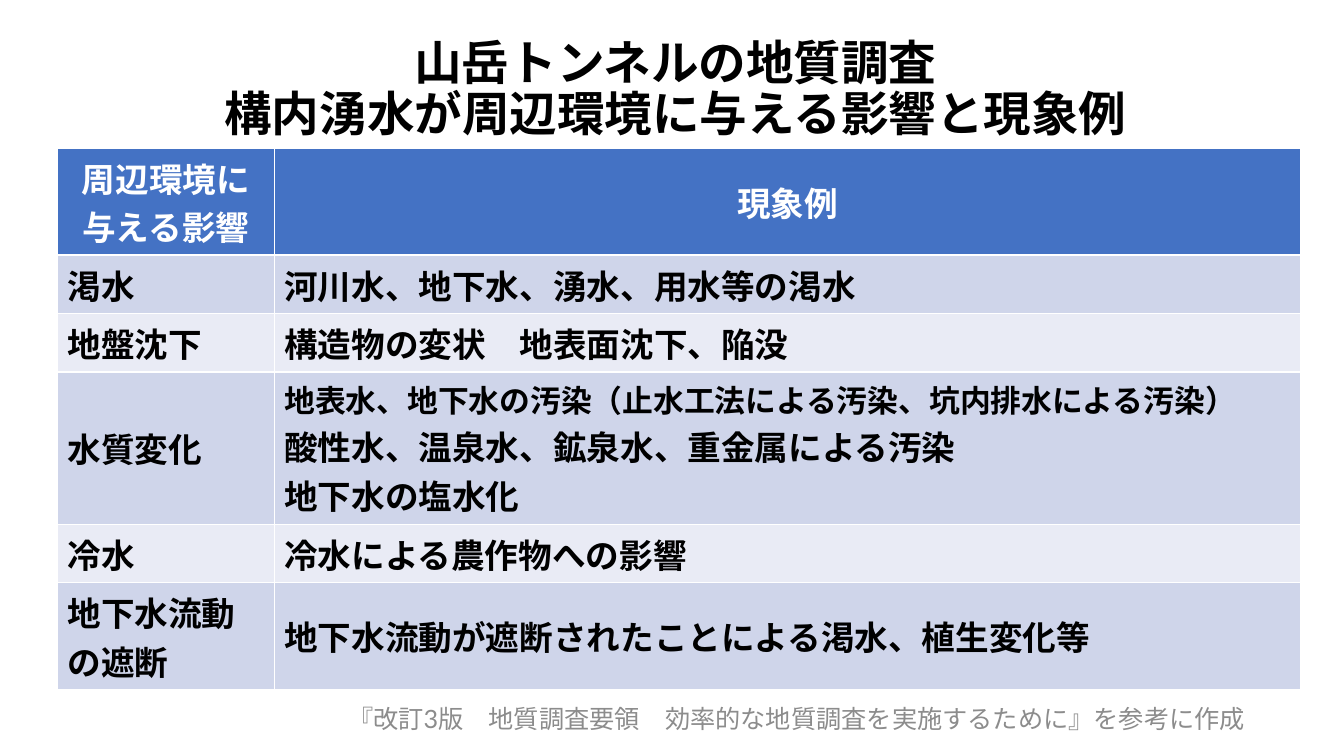
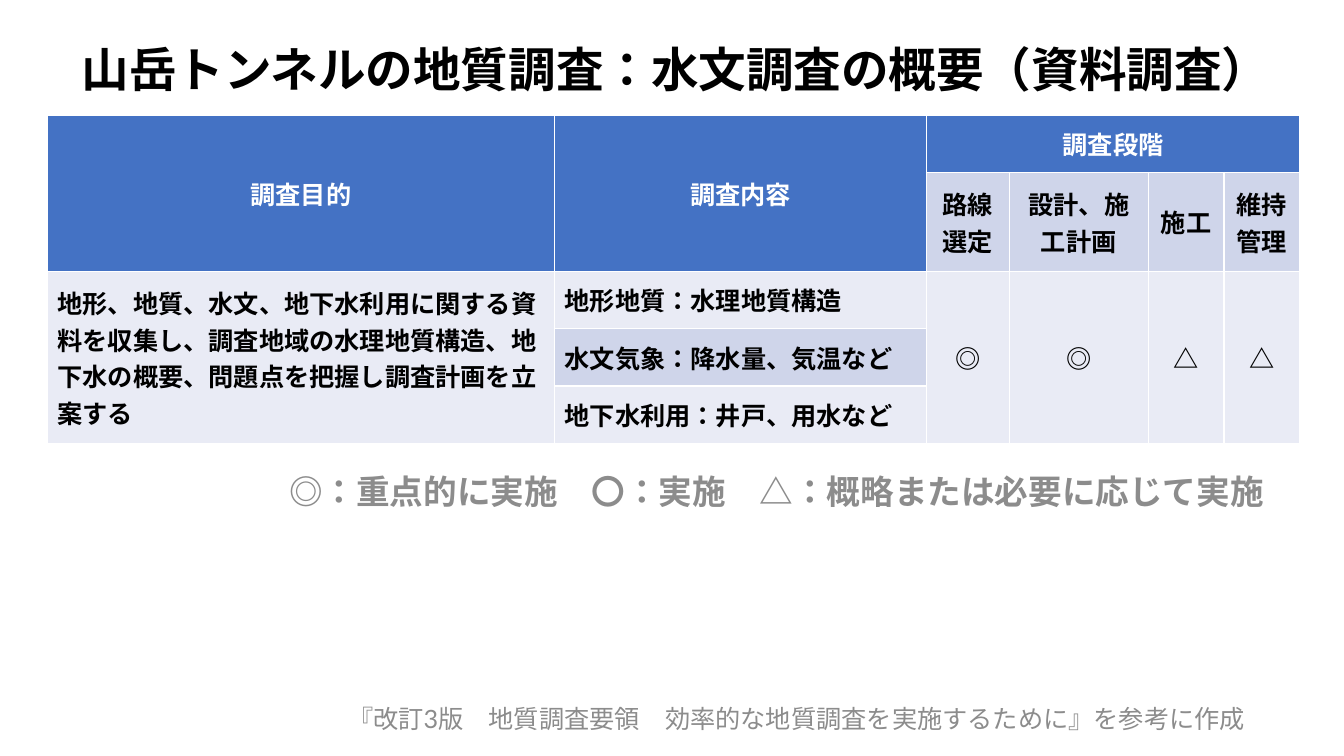
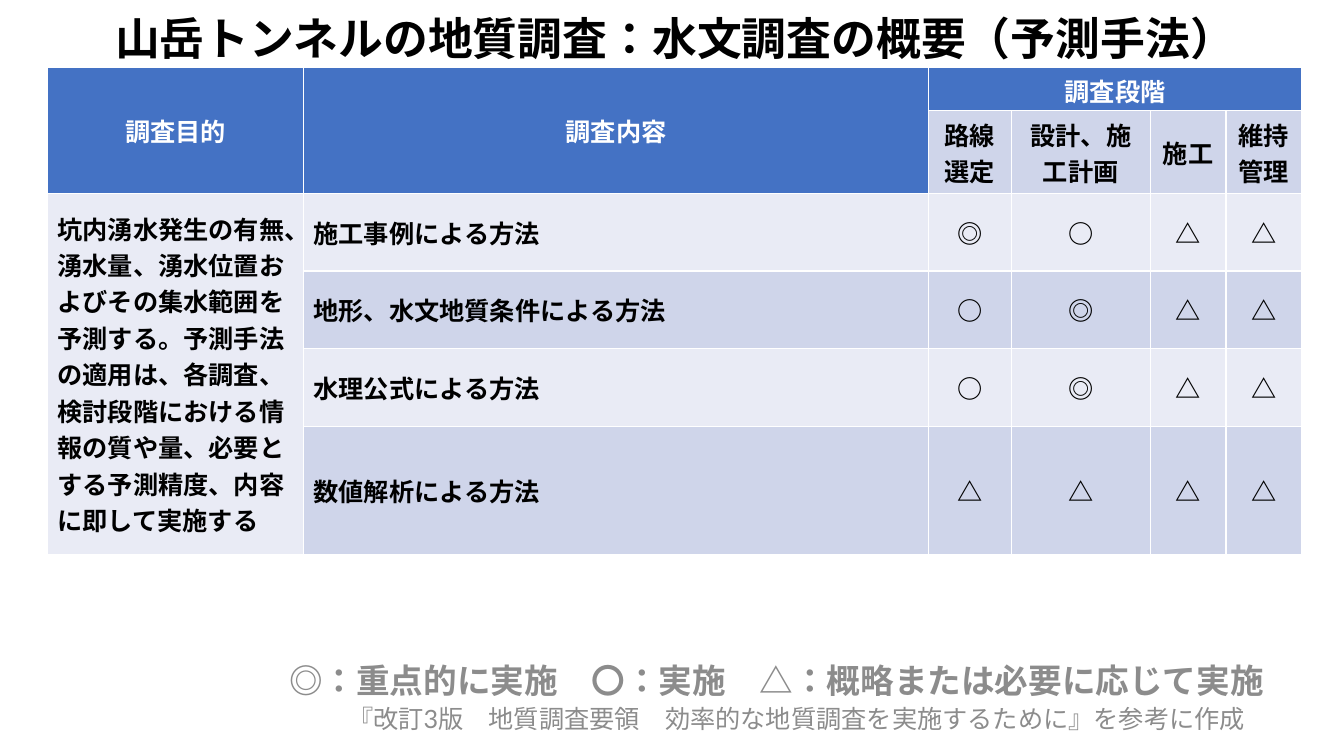
from lxml import etree
from pptx import Presentation
from pptx.dml.color import RGBColor
from pptx.enum.lang import MSO_LANGUAGE_ID
from pptx.enum.text import MSO_ANCHOR, MSO_AUTO_SIZE, PP_ALIGN
from pptx.oxml.ns import qn
from pptx.util import Inches, Pt

CENTER = PP_ALIGN.CENTER
LEFT = PP_ALIGN.LEFT
MIDDLE = MSO_ANCHOR.MIDDLE
NO_FIT = MSO_AUTO_SIZE.NONE
JAPANESE = MSO_LANGUAGE_ID.JAPANESE

LATIN = "Lato"
CJK = "Noto Sans CJK JP"
BLACK, WHITE, GRAY = "000000", "FFFFFF", "8C8C8C"
HEADER = "4472C4"
BANDS = ("E9EBF5", "CFD5EA")
TITLE_ONLY = 5

FOOTER = (("『改訂", CJK), ("3", LATIN),
          ("版　地質調査要領　効率的な地質調査を実施するために』を参考に作成", CJK))
LEGEND = (("◎：重点的に実施　〇：実施　△：概略または必要に応じて実施", CJK),)

STAGE_WIDTHS = [0.82, 1.38, 0.75, 0.75]
STAGE_HEAD = [
    ["調査目的", "調査内容", "調査段階", "", "", ""],
    ["", "", "路線選定", "設計、施工計画", "施工", "維持管理"],
]
STAGE_MERGES = [(0, 0, 1, 0), (0, 1, 1, 1), (0, 2, 0, 5)]

EFFECTS = [
    ["周辺環境に与える影響", "現象例"],
    ["渇水", "河川水、地下水、湧水、用水等の渇水"],
    ["地盤沈下", "構造物の変状　地表面沈下、陥没"],
    ["水質変化", [("地表水、地下水の汚染（止水工法による汚染、坑内排水による汚染）", 22),
              ("酸性水、温泉水、鉱泉水、重金属による汚染", 24),
              ("地下水の塩水化", 24)]],
    ["冷水", "冷水による農作物への影響"],
    ["地下水流動の遮断", "地下水流動が遮断されたことによる渇水、植生変化等"],
]
DOCUMENT_SURVEY = STAGE_HEAD + [
    ["地形、地質、水文、地下水利用に関する資料を収集し、調査地域の水理地質構造、"
     "地下水の概要、問題点を把握し調査計画を立案する",
     "地形地質：水理地質構造", "◎", "◎", "△", "△"],
    ["", "水文気象：降水量、気温など", "", "", "", ""],
    ["", "地下水利用：井戸、用水など", "", "", "", ""],
]
PREDICTION = STAGE_HEAD + [
    ["坑内湧水発生の有無、湧水量、湧水位置およびその集水範囲を予測する。"
     "予測手法の適用は、各調査、検討段階における情報の質や量、"
     "必要とする予測精度、内容に即して実施する",
     "施工事例による方法", "◎", "○", "△", "△"],
    ["", "地形、水文地質条件による方法", "○", "◎", "△", "△"],
    ["", "水理公式による方法", "○", "◎", "△", "△"],
    ["", "数値解析による方法", "△", "△", "△", "△"],
]


def rgb(value):
    """Turn a hex string into a colour."""
    return RGBColor.from_string(value)


def add_run(p, text, size, color, bold=False, font=CJK):
    """Add one formatted run with its Latin and East Asian fonts."""
    r = p.add_run()
    r.text = text
    f = r.font
    f.size, f.bold, f.name = Pt(size), bold, font
    f.color.rgb = rgb(color)
    f.language_id = JAPANESE
    ea = etree.Element(qn("a:ea"), typeface=CJK)
    r._r.rPr.find(qn("a:latin")).addnext(ea)


def add_title(s, lines, top, height, size):
    """Place and fill the title placeholder."""
    sp = s.shapes.title
    sp.left, sp.top = Inches(0.26), Inches(top)
    sp.width, sp.height = Inches(12.88), Inches(height)
    tf = sp.text_frame
    tf.auto_size, tf.vertical_anchor = NO_FIT, MIDDLE
    p = tf.paragraphs[0]
    p.alignment, p.line_spacing = CENTER, 0.9
    for i, line in enumerate(lines):
        if i:
            p.add_line_break()
        add_run(p, line, size, BLACK, True, LATIN)


def add_note(s, runs, box, size, bold=False):
    """Add a centred grey line of text."""
    tf = s.shapes.add_textbox(*map(Inches, box)).text_frame
    tf.word_wrap, tf.vertical_anchor = True, MIDDLE
    p = tf.paragraphs[0]
    p.alignment = CENTER
    for text, font in runs:
        add_run(p, text, size, GRAY, bold, font)


def add_legend(s, top):
    """Add the key to the survey symbols."""
    add_note(s, LEGEND, (2.2, top, 11, 0.53), 24, True)


def fill_cell(cell, content, size, row, centred):
    """Fill and format one table cell."""
    cell.vertical_anchor = MIDDLE
    cell.fill.solid()
    cell.fill.fore_color.rgb = rgb(BANDS[row % 2] if row else HEADER)
    lines = [(content, size)] if isinstance(content, str) else content
    tf = cell.text_frame
    for i, (text, line_size) in enumerate(lines):
        p = tf.add_paragraph() if i else tf.paragraphs[0]
        p.alignment = CENTER if centred else LEFT
        add_run(p, text, line_size, BLACK if row else WHITE, True)


def add_grid(s, left, top, widths, heights, rows, size, merges=()):
    """Add a banded table with a blue header."""
    box = (left, top, sum(widths), sum(heights))
    table = s.shapes.add_table(len(rows), len(widths), *map(Inches, box)).table
    for column, width in zip(table.columns, widths):
        column.width = Inches(width)
    for row, height in zip(table.rows, heights):
        row.height = Inches(height)
    for r1, c1, r2, c2 in merges:
        table.cell(r1, c1).merge(table.cell(r2, c2))
    for i, row in enumerate(rows):
        for j, content in enumerate(row):
            cell = table.cell(i, j)
            if not cell.is_spanned:
                fill_cell(cell, content, size, i, i == 0 or j >= 2)


def add_base(prs, lines, top, height, size=34):
    """Add a slide with its title and source line."""
    s = prs.slides.add_slide(prs.slide_layouts[TITLE_ONLY])
    add_title(s, lines, top, height, size)
    add_note(s, FOOTER, (3.16, 6.9, 9.48, 0.45), 18)
    return s


def main():
    """Build and save the three slides."""
    prs = Presentation()
    prs.slide_width, prs.slide_height = Inches(13.33), Inches(7.5)

    s = add_base(prs, ["山岳トンネルの地質調査", "構内湧水が周辺環境に与える影響と現象例"],
                 0.29, 1.22)
    add_grid(s, 0.57, 1.47, [2.15, 10.18], [1.06, 0.58, 0.58, 1.51, 0.58, 1.06],
             EFFECTS, 24)

    s = add_base(prs, ["山岳トンネルの地質調査：水文調査の概要（資料調査）"], 0.29, 0.86)
    add_grid(s, 0.47, 1.14, [5.03, 3.69] + STAGE_WIDTHS,
             [0.57, 0.98] + [0.57] * 3, DOCUMENT_SURVEY, 18,
             STAGE_MERGES + [(2, c, 4, c) for c in (0, 2, 3, 4, 5)])
    add_legend(s, 4.61)

    s = add_base(prs, ["山岳トンネルの地質調査：水文調査の概要（予測手法）"], 0.14, 0.53, 32)
    add_grid(s, 0.47, 0.67, [2.54, 6.2] + STAGE_WIDTHS,
             [0.43, 0.82] + [0.77] * 3 + [1.27], PREDICTION, 18,
             STAGE_MERGES + [(2, 0, 5, 0)])
    add_legend(s, 6.48)

    prs.save("out.pptx")


if __name__ == "__main__":
    main()
